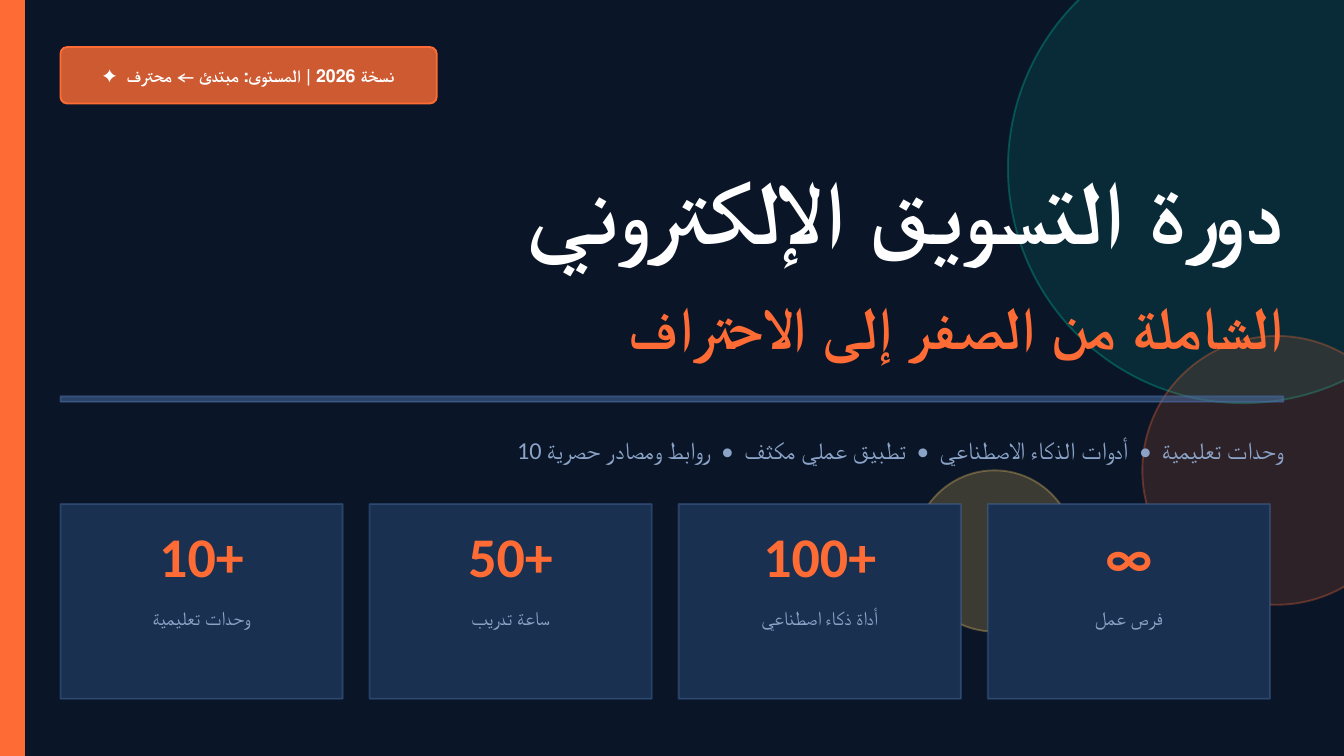
from dataclasses import dataclass

from lxml.etree import SubElement
from pptx import Presentation
from pptx.dml.color import RGBColor
from pptx.enum.shapes import MSO_SHAPE as Preset
from pptx.enum.text import MSO_ANCHOR as Anchor, MSO_AUTO_SIZE as AutoSize, PP_ALIGN as Align
from pptx.oxml.ns import qn
from pptx.util import Pt


@dataclass(frozen=True)
class Theme:
    font: str = "Calibri"
    background: str = "0A1628"
    accent: str = "FF6B35"
    teal: str = "00C9A7"
    gold: str = "FFD166"
    steel: str = "4A6FA5"
    card: str = "1A3050"
    white: str = "FFFFFF"
    muted: str = "8BA3C7"
    title_size: float = 48
    subtitle_size: float = 32
    number_size: float = 30
    topics_size: float = 13
    label_size: float = 10.5
    badge_size: float = 9.5


theme = Theme()


def add_panel(preset, box, fill, line, fill_alpha=100, line_alpha=100):
    shape = slide.shapes.add_shape(preset, *map(Pt, box))
    shape.shadow.inherit = False
    shape.fill.solid()
    shape.line.width = Pt(1)
    for paint, color, alpha in (
        (shape.fill, fill, fill_alpha),
        (shape.line.fill, line, line_alpha),
    ):
        paint.solid()
        paint.fore_color.rgb = RGBColor.from_string(color)
    for color_element, alpha in zip(shape.element.spPr.iter(qn("a:srgbClr")), (fill_alpha, line_alpha)):
        if alpha < 100:
            SubElement(color_element, qn("a:alpha"), val=str(alpha * 1000))
    return shape


def write_text(shape, box, text, size, color, align, bold=False):
    shape.left, shape.top, shape.width, shape.height = map(Pt, box)
    frame = shape.text_frame
    frame.text = text
    frame.word_wrap = True
    frame.auto_size = AutoSize.NONE
    frame.vertical_anchor = Anchor.MIDDLE
    frame.margin_left = frame.margin_top = frame.margin_right = frame.margin_bottom = 0
    paragraph = frame.paragraphs[0]
    paragraph.alignment = align
    paragraph.space_before = Pt(0)
    for run in paragraph.runs:
        run.font.name = theme.font
        run.font.size = Pt(size)
        run.font.bold = bold
        run.font.color.rgb = RGBColor.from_string(color)


presentation = Presentation()
presentation.slide_width = Pt(720)
presentation.slide_height = Pt(405)
slide = presentation.slides.add_slide(presentation.slide_layouts[0])
slide.background.fill.solid()
slide.background.fill.fore_color.rgb = RGBColor.from_string(theme.background)

margin = 32.4
content_width = 720 - 2 * margin

add_panel(Preset.RECTANGLE, (0, 0, 12.96, 405), theme.accent, theme.accent)

circles = [
    (540, -36, 252, theme.teal, 12),
    (612, 180, 144, theme.accent, 15),
    (489.6, 252, 86.4, theme.gold, 20),
]
for left, top, diameter, color, alpha in circles:
    add_panel(Preset.OVAL, (left, top, diameter, diameter), color, color, alpha, 30)

badge_box = (margin, 25.2, 201.6, 30.24)
badge = add_panel(Preset.ROUNDED_RECTANGLE, badge_box, theme.accent, theme.accent, 80)
badge.adjustments[0] = 0.12
write_text(badge, badge_box, "✦  نسخة 2026 | المستوى: مبتدئ ← محترف",
           theme.badge_size, theme.white, Align.CENTER, True)

title = slide.shapes.title
subtitle = slide.placeholders[1]
for placeholder in (title, subtitle):
    slide.shapes.element.append(placeholder.element)
write_text(title, (margin, 72, content_width, 79.2), "دورة التسويق الإلكتروني",
           theme.title_size, theme.white, Align.RIGHT, True)
write_text(subtitle, (margin, 144, content_width, 61.2), "الشاملة من الصفر إلى الاحتراف",
           theme.subtitle_size, theme.accent, Align.RIGHT, True)

add_panel(Preset.RECTANGLE, (margin, 212.4, content_width, 2.88), theme.steel, theme.steel, 50, 50)

topics_box = (margin, 223.2, content_width, 36)
write_text(slide.shapes.add_textbox(*map(Pt, topics_box)), topics_box,
           "10 وحدات تعليمية  •  أدوات الذكاء الاصطناعي  •  تطبيق عملي مكثف  •  روابط ومصادر حصرية",
           theme.topics_size, theme.muted, Align.RIGHT)

card_width = 151.2
card_gap = 14.4
statistics = [
    ("10+", "وحدات تعليمية"),
    ("50+", "ساعة تدريب"),
    ("100+", "أداة ذكاء اصطناعي"),
    ("∞", "فرص عمل"),
]
for index, (number, label) in enumerate(statistics):
    left = margin + index * (card_width + card_gap)
    add_panel(Preset.RECTANGLE, (left, 270, card_width, 104.4), theme.card, theme.steel, line_alpha=40)
    for text, top, height, size, color, bold in (
        (number, 272.16, 50.4, theme.number_size, theme.accent, True),
        (label, 316.8, 28.8, theme.label_size, theme.muted, False),
    ):
        box = (left, top, card_width, height)
        write_text(slide.shapes.add_textbox(*map(Pt, box)), box, text, size, color, Align.CENTER, bold)

presentation.save("out.pptx")
